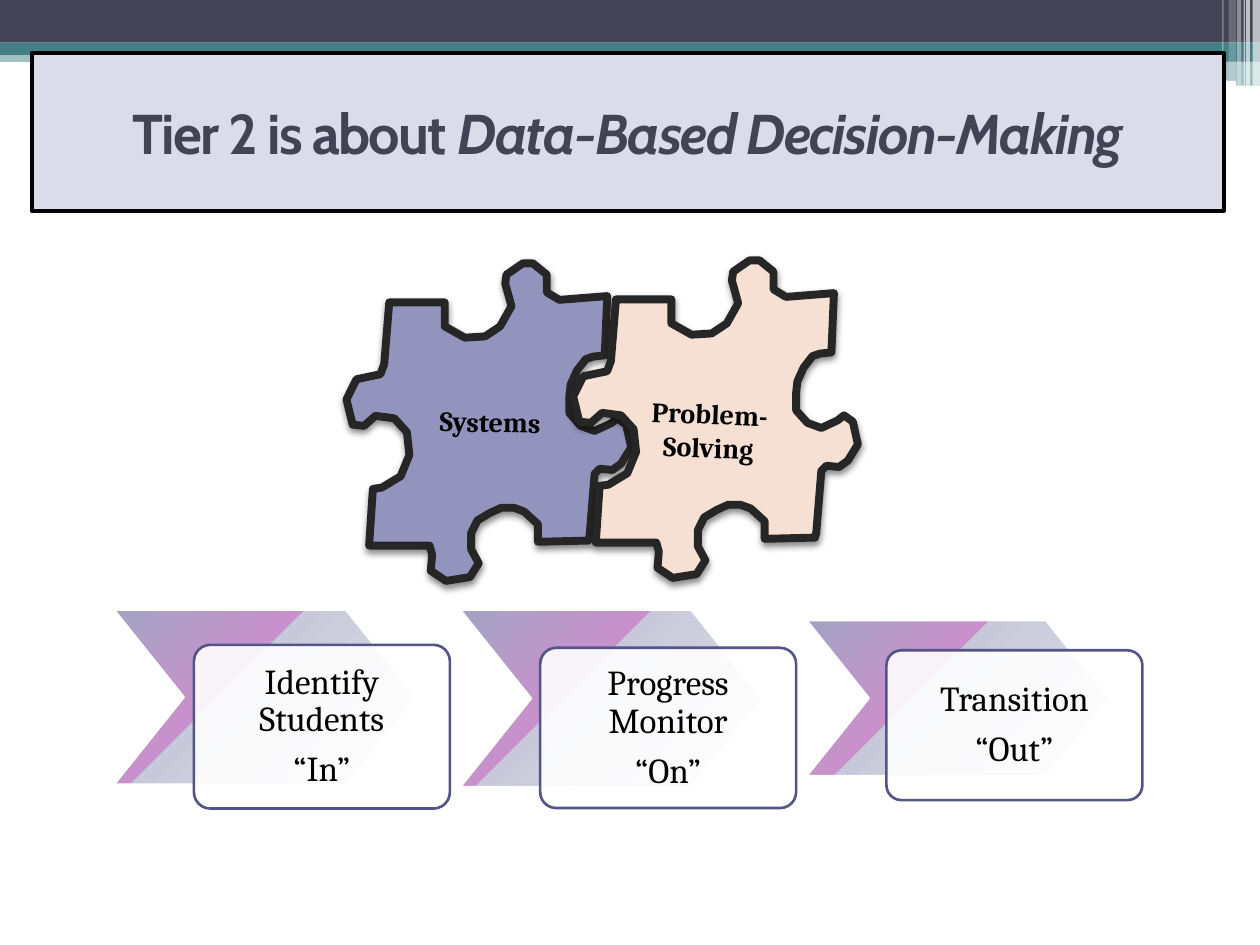
from dataclasses import dataclass

from lxml.etree import SubElement
from pptx import Presentation
from pptx.dml.color import RGBColor
from pptx.enum.shapes import MSO_SHAPE as SHAPE
from pptx.enum.text import MSO_ANCHOR as ANCHOR, MSO_AUTO_SIZE as FIT, PP_ALIGN as ALIGN
from pptx.oxml.ns import qn
from pptx.util import Cm, Pt


@dataclass(frozen=True)
class Theme:
    dark: str = "424456"
    teal: str = "438086"
    white: str = "FFFFFF"
    black: str = "000000"
    panel: str = "DBDBE9"
    card_line: str = "53548A"
    piece_line: str = "262626"
    pieces: tuple = ("9394BE", "F5E0D3")
    chevron: tuple = ((0, "A3A4C3"), (40, "C991CB"), (40, "C7C8D9"), (100, "E4E4EC"))
    title_font: str = "Cabin"
    body_font: str = "Cambria"
    title_size: Pt = Pt(32)
    card_size: Pt = Pt(20)
    piece_size: Pt = Pt(16)


theme = Theme()


def style(sp, fill=None, alpha=100, line=None, width=0):
    """Set a shape's solid fill, its opacity in percent and its outline."""
    sp.shadow.inherit = False
    if fill:
        sp.fill.solid()
        sp.fill.fore_color.rgb = RGBColor.from_string(fill)
        if alpha < 100:
            clr = sp.fill._xPr.find(".//" + qn("a:srgbClr"))
            SubElement(clr, qn("a:alpha"), val=str(alpha * 1000))
    if line:
        sp.line.color.rgb = RGBColor.from_string(line)
        sp.line.width = Pt(width)
    else:
        sp.line.fill.background()


def set_font(p, name, size, color, bold=False):
    p.alignment = ALIGN.CENTER
    p.font.name, p.font.size, p.font.bold = name, size, bold
    p.font.color.rgb = RGBColor.from_string(color)


prs = Presentation()
prs.slide_width, prs.slide_height = Cm(25.4), Cm(19.05)
s = prs.slides.add_slide(prs.slide_layouts[5])
shapes = s.shapes

# Header bands, then the light stripes at the right edge
bands = [
    (0, 1.02, 25.4, 0.23, theme.teal, 50),
    (0, 0, 25.4, 0.86, theme.dark, 100),
    (0, 0.86, 25.4, 0.25, theme.teal, 100),
    (15.04, 0.99, 10.36, 0.25, theme.teal, 100),
    (15.04, 1.22, 10.36, 0.51, theme.teal, 50),
    (20.47, 1.63, 4.45, 0.1, theme.white, 100),
]
stripes = [
    (25.25, 0.15, 1.73, 65), (25.12, 0.08, 1.73, 65), (25.07, 0.03, 1.73, 60),
    (24.94, 0.08, 1.73, 40), (24.77, 0.15, 1.63, 20), (24.64, 0.03, 1.63, 30),
]
bands += [(x, 0, w, h, theme.white, alpha) for x, w, h, alpha in stripes]
for x, y, w, h, color, alpha in bands:
    kind = SHAPE.ROUNDED_RECTANGLE if h == 0.1 else SHAPE.RECTANGLE
    sp = shapes.add_shape(kind, Cm(x), Cm(y), Cm(w), Cm(h))
    style(sp, color, alpha)

# Process steps: a chevron with a card in front
steps = [  # lines, chevron top and height, card top and height
    (("Identify Students", "“In”"), 12.29, 3.53, 13.0, 3.3),
    (("Progress Monitor", "“On”"), 12.29, 3.58, 13.06, 3.23),
    (("Transition", "“Out”"), 12.5, 3.15, 13.11, 3.02),
]
for i, (lines, top, height, card_top, card_height) in enumerate(steps):
    x = 2.29 + 6.98 * i
    chevron = shapes.add_shape(SHAPE.CHEVRON, Cm(x), Cm(top), Cm(6.1), Cm(height))
    chevron.adjustments[0] = 0.4
    style(chevron, line=theme.white, width=1.5)
    chevron.fill.gradient()
    chevron.fill.gradient_angle = 315
    stops = chevron.fill._xPr.find(".//" + qn("a:gsLst"))
    stops.clear()
    for pos, color in theme.chevron:
        gs = SubElement(stops, qn("a:gs"), pos=str(pos * 1000))
        SubElement(gs, qn("a:srgbClr"), val=color)

    card = shapes.add_shape(SHAPE.ROUNDED_RECTANGLE, Cm(x + 1.62), Cm(card_top),
                            Cm(5.16), Cm(card_height))
    card.adjustments[0] = 0.1
    style(card, theme.white, 90, theme.card_line, 1.5)
    tf = card.text_frame
    tf.word_wrap = True
    tf.vertical_anchor = ANCHOR.MIDDLE
    tf.margin_left = tf.margin_right = tf.margin_top = tf.margin_bottom = Cm(0.5)
    tf.text = "\n".join(lines)
    for p in tf.paragraphs:
        set_font(p, theme.body_font, theme.card_size, theme.black)
        p.line_spacing = 0.9
        p.space_after = Pt(7)

# Title, brought in front of the header bands
title = shapes.title
title.element.getparent().append(title.element)
title.left, title.top, title.width, title.height = Cm(0.64), Cm(1.07), Cm(24.03), Cm(3.18)
style(title, theme.panel, line=theme.black, width=2.25)
tf = title.text_frame
tf.auto_size = FIT.NONE
tf.word_wrap = True
tf.vertical_anchor = ANCHOR.MIDDLE
p = tf.paragraphs[0]
set_font(p, theme.title_font, theme.title_size, theme.dark, bold=True)
for text, italic in (("Tier 2 is about ", False), ("Data-Based Decision-Making", True)):
    r = p.add_run()
    r.text = text
    r.font.italic = italic
    r.font._element.set("spc", "-100")

# Puzzle pieces: one outline, in units of 0.0254 cm, placed twice
outline = [
    (482, 235), (480, 282), (471, 283), (465, 285), (458, 294), (453, 305), (452, 314),
    (452, 328), (461, 338), (472, 342), (485, 336), (490, 332), (497, 337), (501, 355),
    (493, 368), (486, 373), (476, 372), (472, 376), (468, 425), (467, 429), (427, 430),
    (427, 416), (416, 406), (408, 403), (398, 403), (389, 407), (379, 413), (374, 423),
    (374, 436), (380, 447), (373, 458), (354, 461), (342, 453), (343, 440), (341, 433),
    (293, 433), (296, 388), (303, 387), (318, 378), (325, 361), (323, 343), (313, 332),
    (298, 330), (289, 338), (280, 337), (277, 325), (275, 317), (283, 301), (302, 297),
    (305, 289), (309, 240), (353, 240), (353, 259), (369, 268), (385, 267), (397, 259),
    (406, 243), (401, 225), (402, 218), (415, 209), (423, 209), (434, 218), (434, 232),
    (444, 238),
]
pieces = [  # text, piece offset, label box, label rotation
    ("Systems", (0, 0), (8.23, 8.03, 3.3, 0.94), 0.8),
    ("Problem-Solving", (4.57, -0.06), (12.67, 7.87, 3.25, 1.63), 2.3),
]
for (text, (dx, dy), box, angle), color in zip(pieces, theme.pieces):
    builder = shapes.build_freeform(*outline[0], scale=Cm(2.54) / 100)
    builder.add_line_segments(outline[1:], close=True)
    piece = builder.convert_to_shape(Cm(dx), Cm(dy))
    style(piece, color, line=theme.piece_line, width=4.5)
    effects = piece.element.spPr.find(qn("a:effectLst"))
    shadow = SubElement(effects, qn("a:outerShdw"), blurRad=str(Pt(4)),
                        dist=str(Pt(2)), dir="5400000", rotWithShape="0")
    clr = SubElement(shadow, qn("a:srgbClr"), val=theme.black)
    SubElement(clr, qn("a:alpha"), val="45000")

    label = shapes.add_textbox(*map(Cm, box))
    label.rotation = angle
    tf = label.text_frame
    tf.word_wrap = True
    tf.auto_size = FIT.SHAPE_TO_FIT_TEXT
    tf.text = text
    set_font(tf.paragraphs[0], theme.body_font, theme.piece_size, theme.black, bold=True)

prs.save("out.pptx")
